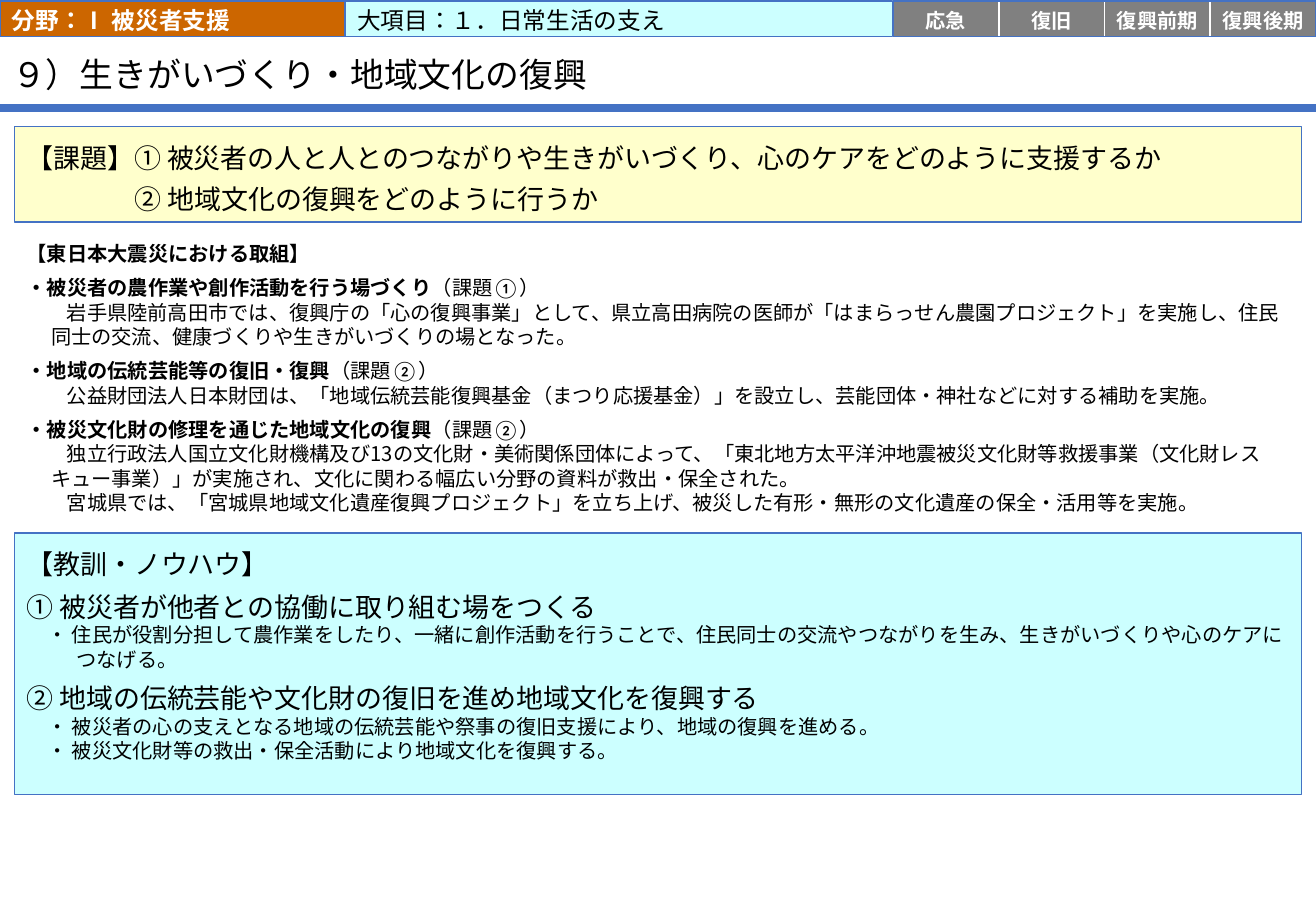
import pptx
import pptx.util
import pptx.dml.color
import pptx.enum.text
import pptx.enum.shapes
import pptx.oxml.ns
import lxml.etree

Inches = pptx.util.Inches
Anchor = pptx.enum.text.MSO_ANCHOR
Align = pptx.enum.text.PP_ALIGN


class Theme:
    blue, orange, grey = "4472C4", "CC6600", "808080"
    aqua, cream = "CCFFFF", "FFFFCC"
    white, black = "FFFFFF", "000000"
    head, body = "Calibri", "Noto Sans CJK JP"
    title, large, label, small = 20, 16, 14, 12


def rgb(code):
    return pptx.dml.color.RGBColor.from_string(code)


def write(shape, text, size=Theme.small, font=Theme.body, color=Theme.black,
          bold=False, note="", left=0, first=0, before=0, line=1.0,
          align=Align.LEFT):
    """Add one paragraph; note is a closing run that is never bold."""
    frame = shape.text_frame
    para = frame.paragraphs[0]
    if para.runs:
        para = frame.add_paragraph()
    para.alignment = align
    para.line_spacing = line
    para.space_before = pptx.util.Pt(before)
    props = para._p.get_or_add_pPr()
    props.set("marL", str(Inches(left)))
    props.set("indent", str(Inches(first)))
    lxml.etree.SubElement(props, pptx.oxml.ns.qn("a:buNone"))
    for part, heavy in ((text, bold), (note, False)):
        if not part:
            continue
        run = para.add_run()
        run.text = part
        run.font.size = pptx.util.Pt(size)
        run.font.name = font
        run.font.bold = heavy
        run.font.color.rgb = rgb(color)
        mark = run._r.get_or_add_rPr()
        mark.set("lang", "ja-JP")
        east = lxml.etree.SubElement(mark, pptx.oxml.ns.qn("a:ea"))
        east.set("typeface", font)


deck = pptx.Presentation()
wide, high = 10.83, 7.5
deck.slide_width, deck.slide_height = Inches(wide), Inches(high)
slide = deck.slides.add_slide(deck.slide_layouts[1])
title, work = slide.shapes.title, slide.placeholders[1]

# Grid: a header row of tabs, and panels set in by one margin
edge, top, row = 0.12, 0.01, 0.29
tab = 0.87
tabs = ["応急", "復旧", "復興前期", "復興後期"]
start = wide - tab * len(tabs)
split = 2.84
span = wide - 2 * edge

rule = slide.shapes.add_connector(
    pptx.enum.shapes.MSO_CONNECTOR.STRAIGHT,
    0, Inches(0.89), Inches(wide), Inches(0.89))
rule.line.color.rgb = rgb(Theme.blue)
rule.line.width = pptx.util.Pt(4.5)
lxml.etree.SubElement(rule._element.spPr, pptx.oxml.ns.qn("a:effectLst"))

# name: left, top, width, height, fill, line, side inset, top inset, low inset
plan = {
    "field": (0, top, split, row, Theme.orange, Theme.blue, 0.1, 0.02, 0),
    "topic": (split, top, start - split + 0.02, row,
              Theme.aqua, Theme.blue, 0.1, 0.02, 0),
    "issue": (edge, 1.04, span, 0.79, Theme.cream, Theme.blue, 0.1, 0.12, 0.12),
    "lesson": (edge, 4.39, span, 2.15, Theme.aqua, Theme.blue, 0.1, 0.12, 0),
}
for i, name in enumerate(tabs):
    plan[name] = (start + i * tab, top, tab, row,
                  Theme.grey, Theme.white, 0, 0.02, 0)
plan["frame"] = (start, top, wide - start, row, None, Theme.blue, 0, 0, 0)
plan["title"] = (0, 0.32, 9.48, 0.58, None, None, 0.1, 0.04, 0)
plan["work"] = (edge, 1.9, span, 2.42, Theme.white, None, 0.1, 0.05, 0.05)

parts = {"title": title, "work": work}
for name, (x, y, w, h, fill, line, side, head, foot) in plan.items():
    place = [Inches(n) for n in (x, y, w, h)]
    if name in parts:
        shape = parts[name]
        shape.left, shape.top, shape.width, shape.height = place
    else:
        shape = slide.shapes.add_shape(
            pptx.enum.shapes.MSO_SHAPE.RECTANGLE, *place)
        shape.shadow.inherit = False
        parts[name] = shape
    if fill:
        shape.fill.solid()
        shape.fill.fore_color.rgb = rgb(fill)
    else:
        shape.fill.background()
    if line:
        shape.line.color.rgb = rgb(line)
        shape.line.width = pptx.util.Pt(1)
    else:
        shape.line.fill.background()
    frame = shape.text_frame
    frame.word_wrap = True
    frame.auto_size = pptx.enum.text.MSO_AUTO_SIZE.NONE
    frame.vertical_anchor = Anchor.TOP if name == "lesson" else Anchor.MIDDLE
    frame.margin_left = frame.margin_right = Inches(side)
    frame.margin_top, frame.margin_bottom = Inches(head), Inches(foot)

write(title, "９）生きがいづくり・地域文化の復興", size=Theme.title, line=0.9)
write(parts["field"], "分野：Ⅰ 被災者支援", size=Theme.label,
      font=Theme.head, color=Theme.white, bold=True)
write(parts["topic"], "大項目：１．日常生活の支え", size=Theme.label,
      font=Theme.head)
for name in tabs:
    write(parts[name], name, font=Theme.head, color=Theme.white, bold=True,
          align=Align.CENTER)

pitch = pptx.util.Pt(24)
write(parts["issue"], "【課題】① 被災者の人と人とのつながりや生きがいづくり、"
      "心のケアをどのように支援するか", size=Theme.large, line=pitch)
write(parts["issue"], "② 地域文化の復興をどのように行うか",
      size=Theme.large, line=pitch, left=0.89)

efforts = [
    ("・被災者の農作業や創作活動を行う場づくり", "（課題①）", [
        "岩手県陸前高田市では、復興庁の「心の復興事業」として、県立高田病院の医師が"
        "「はまらっせん農園プロジェクト」を実施し、住民同士の交流、"
        "健康づくりや生きがいづくりの場となった。"]),
    ("・地域の伝統芸能等の復旧・復興", "（課題②）", [
        "公益財団法人日本財団は、「地域伝統芸能復興基金（まつり応援基金）」を設立し、"
        "芸能団体・神社などに対する補助を実施。"]),
    ("・被災文化財の修理を通じた地域文化の復興", "（課題②）", [
        "独立行政法人国立文化財機構及び13の文化財・美術関係団体によって、"
        "「東北地方太平洋沖地震被災文化財等救援事業（文化財レスキュー事業）」が実施され、"
        "文化に関わる幅広い分野の資料が救出・保全された。",
        "宮城県では、「宮城県地域文化遺産復興プロジェクト」を立ち上げ、"
        "被災した有形・無形の文化遺産の保全・活用等を実施。"]),
]
write(work, "【東日本大震災における取組】", font=Theme.head, bold=True)
for theme, note, items in efforts:
    write(work, theme, font=Theme.head, bold=True, note=note, before=6)
    for item in items:
        write(work, item, left=0.2, first=0.13)

lessons = [
    ("① 被災者が他者との協働に取り組む場をつくる", [
        "・ 住民が役割分担して農作業をしたり、一緒に創作活動を行うことで、"
        "住民同士の交流やつながりを生み、生きがいづくりや心のケアにつなげる。"]),
    ("② 地域の伝統芸能や文化財の復旧を進め地域文化を復興する", [
        "・ 被災者の心の支えとなる地域の伝統芸能や祭事の復旧支援により、地域の復興を進める。",
        "・ 被災文化財等の救出・保全活動により地域文化を復興する。"]),
]
write(parts["lesson"], "【教訓・ノウハウ】", size=Theme.large)
for theme, items in lessons:
    write(parts["lesson"], theme, size=Theme.large, before=6)
    for item in items:
        write(parts["lesson"], item, left=0.41, first=-0.24)

deck.save("out.pptx")
